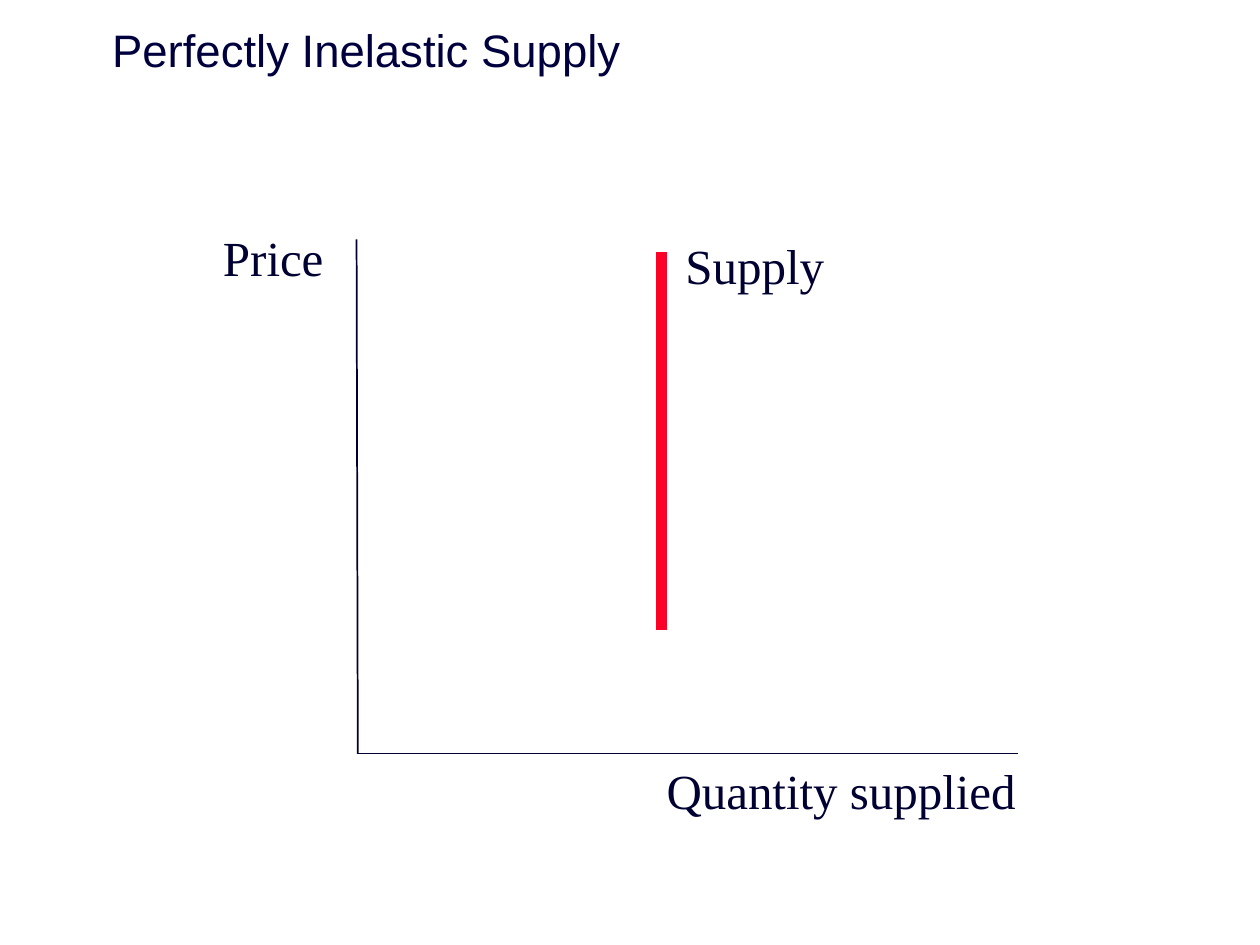
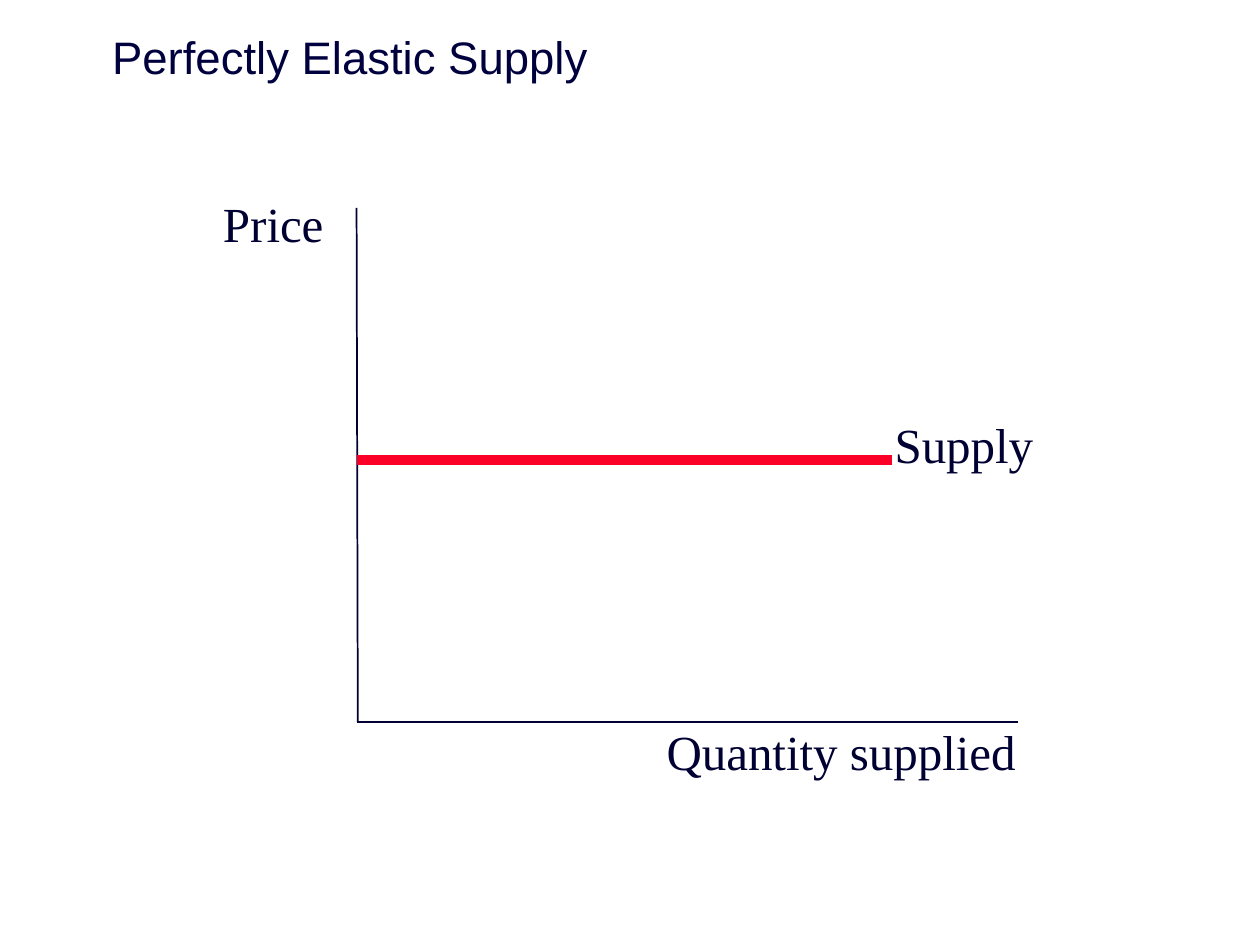
from dataclasses import dataclass

from lxml.etree import SubElement
from pptx import Presentation
from pptx.dml.color import RGBColor
from pptx.enum.shapes import MSO_CONNECTOR
from pptx.enum.text import MSO_ANCHOR, MSO_AUTO_SIZE, PP_ALIGN
from pptx.oxml.ns import qn
from pptx.slide import Slide
from pptx.text.text import TextFrame
from pptx.util import Inches, Pt

# Shared style
TITLE_COLOUR = "00003E"
INK = "000032"
SUPPLY_RED = "FC0128"
TITLE_FONT, LABEL_FONT = "Arial", "Times New Roman"

# Shared axis geometry, in inches
AXIS_LEFT, AXIS_RIGHT, AXIS_HEIGHT = 2.83, 8.08, 4.08
LABEL_HEIGHT = 0.54


@dataclass(frozen=True)
class Line:
    start: tuple[float, float]
    end: tuple[float, float]
    colour: str = INK
    width: float = 1


@dataclass(frozen=True)
class Label:
    text: str
    left: float
    top: float
    width: float


@dataclass(frozen=True)
class SupplyDiagram:
    title: str
    title_top: float
    axis_top: float
    price_top: float
    quantity_top: float
    supply_curve: Line
    supply_label: Label


DIAGRAMS = [
    SupplyDiagram(
        "Perfectly Inelastic Supply", title_top=-0.03, axis_top=1.9,
        price_top=1.77, quantity_top=6,
        supply_curve=Line((5.25, 2), (5.25, 5), SUPPLY_RED, 6),
        supply_label=Label("Supply", 5.4, 1.83, 1.27),
    ),
    SupplyDiagram(
        "Perfectly Elastic Supply", title_top=0.02, axis_top=1.65,
        price_top=1.5, quantity_top=5.69,
        supply_curve=Line((AXIS_LEFT, 3.65), (7.08, 3.65), SUPPLY_RED, 6),
        supply_label=Label("Supply", 7.06, 3.25, 1.27),
    ),
]


def rgb(colour: str) -> RGBColor:
    return RGBColor.from_string(colour)


def write(frame: TextFrame, text: str, *, font: str, size: float, colour: str,
          margins: tuple[float, float, float, float], wrap: bool = True,
          autofit: MSO_AUTO_SIZE = MSO_AUTO_SIZE.NONE, indent: float = 0) -> None:
    """Fill a frame with one left-aligned, vertically centred paragraph."""
    frame.auto_size = autofit
    frame.word_wrap = wrap
    frame.vertical_anchor = MSO_ANCHOR.MIDDLE
    (frame.margin_left, frame.margin_top,
     frame.margin_right, frame.margin_bottom) = map(Inches, margins)
    frame.text = text
    paragraph = frame.paragraphs[0]
    paragraph.alignment = PP_ALIGN.LEFT
    if indent:
        paragraph._p.get_or_add_pPr().set("marL", str(Inches(indent)))
    run_font = paragraph.runs[0].font
    run_font.name, run_font.size = font, Pt(size)
    run_font.color.rgb = rgb(colour)


def draw_title(slide: Slide, text: str, top: float) -> None:
    title = slide.shapes.title
    title.left, title.top = Inches(0.79), Inches(top)
    title.width, title.height = Inches(9.33), Inches(0.85)
    write(title.text_frame, text, font=TITLE_FONT, size=26, colour=TITLE_COLOUR,
          margins=(0.1, 0.05, 0.14, 0.05))


def draw_line(slide: Slide, line: Line) -> None:
    connector = slide.shapes.add_connector(
        MSO_CONNECTOR.STRAIGHT, *map(Inches, line.start + line.end))
    connector.line.color.rgb = rgb(line.colour)
    connector.line.width = Pt(line.width)
    SubElement(connector._element.spPr, qn("a:effectLst"))


def draw_label(slide: Slide, label: Label) -> None:
    box = slide.shapes.add_textbox(
        Inches(label.left), Inches(label.top),
        Inches(label.width), Inches(LABEL_HEIGHT))
    write(box.text_frame, label.text, font=LABEL_FONT, size=28, colour=INK,
          margins=(0, 0, 0.04, 0), wrap=False,
          autofit=MSO_AUTO_SIZE.SHAPE_TO_FIT_TEXT, indent=0.04)


def draw_diagram(slide: Slide, diagram: SupplyDiagram) -> None:
    draw_title(slide, diagram.title, diagram.title_top)

    # Axes and supply curve
    axis_bottom = diagram.axis_top + AXIS_HEIGHT
    price_axis = Line((AXIS_LEFT, diagram.axis_top), (AXIS_LEFT + 0.01, axis_bottom))
    quantity_axis = Line((AXIS_LEFT, axis_bottom), (AXIS_RIGHT, axis_bottom))
    for line in (price_axis, quantity_axis, diagram.supply_curve):
        draw_line(slide, line)

    # Axis and curve labels
    price_label = Label("Price", 1.73, diagram.price_top, 0.97)
    quantity_label = Label("Quantity supplied", 5.25, diagram.quantity_top, 2.94)
    for label in (price_label, quantity_label, diagram.supply_label):
        draw_label(slide, label)


def main() -> None:
    deck = Presentation()
    deck.slide_width, deck.slide_height = Inches(10), Inches(7.5)
    title_only = deck.slide_layouts.get_by_name("Title Only")
    for diagram in DIAGRAMS:
        draw_diagram(deck.slides.add_slide(title_only), diagram)
    deck.save("out.pptx")


if __name__ == "__main__":
    main()
